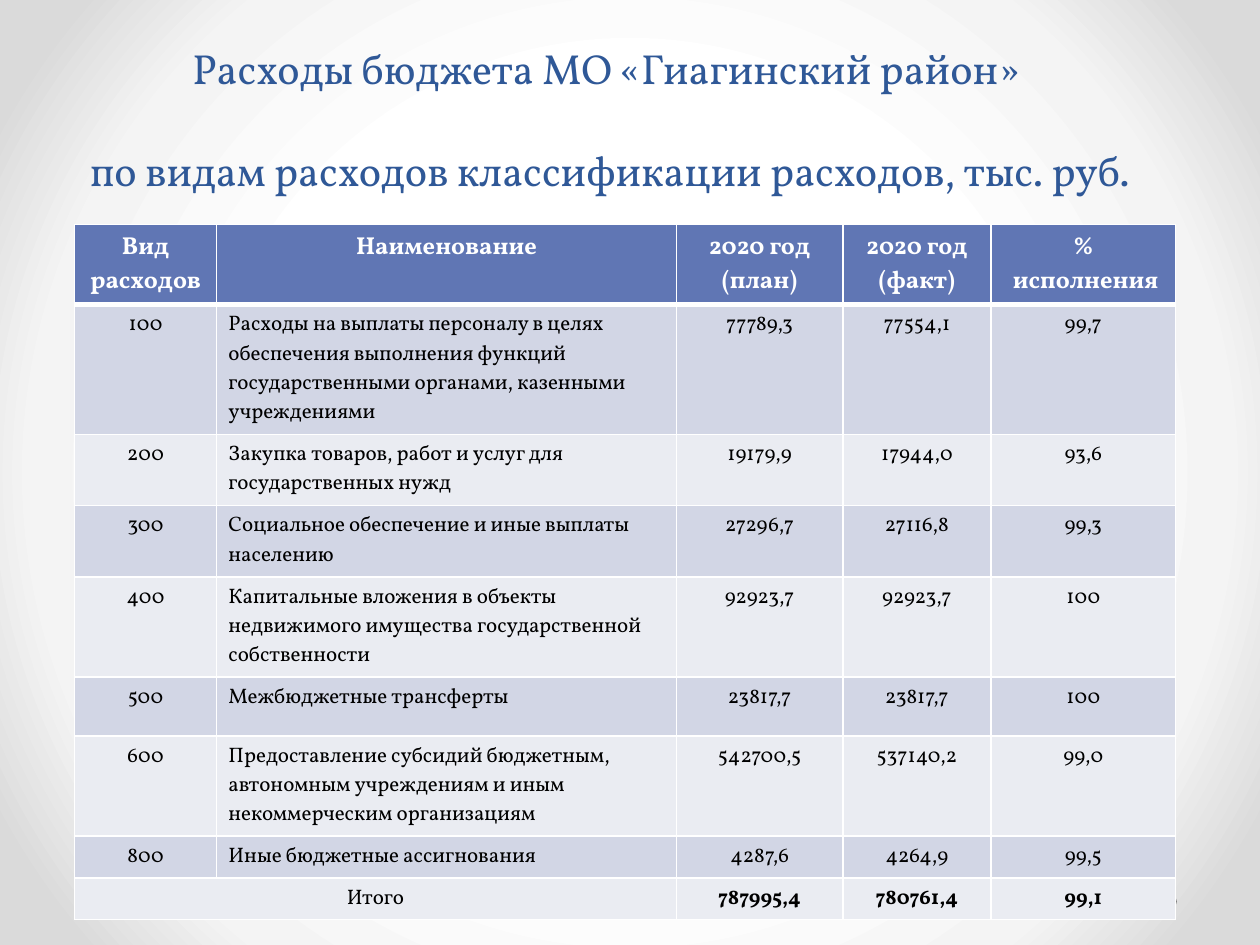
from dataclasses import dataclass

from pptx import Presentation
from pptx import util as u
from pptx.dml.color import RGBColor
from pptx.enum import shapes, text
from pptx.oxml import parse_xml
from pptx.oxml.ns import nsdecls
from pptx.slide import Slide
from pptx.table import _Cell

Pt = u.Pt


@dataclass(frozen=True)
class Theme:
    font: str = "Vollkorn"
    title: str = "2F5897"
    header: str = "6076B4"
    bands: tuple[str, str] = ("D2D6E5", "EAECF2")
    white: str = "FFFFFF"
    black: str = "000000"
    dot: str = "808080"
    background: tuple[tuple[int, str], ...] = (
        (50, "FFFFFF"), (76, "F4F4F4"), (92, "DADADA"))
    title_size: int = 24
    header_size: int = 14
    body_size: int = 12


@dataclass(frozen=True)
class CellStyle:
    fill: str
    color: str
    size: int
    bold: bool = False
    centered: bool = True
    bottom_line: int = 1


@dataclass(frozen=True)
class Expense:
    code: str
    name: str
    plan: str
    fact: str
    percent: str
    height: float


THEME = Theme()
TITLE = ("Расходы бюджета МО «Гиагинский район» \v"
         "по видам расходов классификации расходов, тыс. руб.")
HEADERS = ("Вид расходов", "Наименование", "2020 год\n(план)",
           "2020 год (факт)", "%\n исполнения")
HEADER_HEIGHT = 45.8
COLUMN_WIDTHS = (81.2, 262.8, 95, 84.8, 105.4)
EXPENSES = (
    Expense("100", "Расходы на выплаты персоналу в целях обеспечения выполнения функций "
            "государственными органами, казенными учреждениями",
            "77789,3", "77554,1", "99,7", 74.2),
    Expense("200", "Закупка товаров, работ и услуг для государственных нужд",
            "19179,9", "17944,0", "93,6", 40.7),
    Expense("300", "Социальное обеспечение и иные выплаты населению",
            "27296,7", "27116,8", "99,3", 40.7),
    Expense("400", "Капитальные вложения в объекты недвижимого имущества "
            "государственной собственности", "92923,7", "92923,7", "100", 57.2),
    Expense("500", "Межбюджетные трансферты", "23817,7", "23817,7", "100", 33.8),
    Expense("600", "Предоставление субсидий бюджетным, автономным учреждениям и иным "
            "некоммерческим организациям", "542700,5", "537140,2", "99,0", 57.2),
    Expense("800", "Иные бюджетные ассигнования", "4287,6", "4264,9", "99,5", 23.9),
    Expense("Итого", "", "787995,4", "780761,4", "99,1", 23.9),
)


def set_background(slide: Slide) -> None:
    slide.background.fill.solid()
    properties = slide.element.xpath(".//p:bgPr")[0]
    stops = "".join(
        f'<a:gs pos="{position * 1000}"><a:srgbClr val="{color}"/></a:gs>'
        for position, color in THEME.background)
    properties.replace(properties[0], parse_xml(
        f'<a:gradFill {nsdecls("a")} rotWithShape="1"><a:gsLst>{stops}</a:gsLst>'
        '<a:path path="circle"><a:fillToRect l="50000" t="50000" r="50000" b="50000"/>'
        '</a:path></a:gradFill>'))


def add_dot(slide: Slide, left: float) -> None:
    shape = slide.shapes.add_shape(
        shapes.MSO_SHAPE.OVAL, Pt(left), Pt(511.9), Pt(6.5), Pt(6.5))
    shape.shadow.inherit = False
    shape.fill.solid()
    shape.fill.fore_color.rgb = RGBColor.from_string(THEME.dot)
    shape.line.fill.background()


def style_paragraph(paragraph, size: int, color: str, bold: bool, centered: bool) -> None:
    paragraph.alignment = text.PP_ALIGN.CENTER if centered else text.PP_ALIGN.LEFT
    paragraph.font.name = THEME.font
    paragraph.font.size = Pt(size)
    paragraph.font.bold = bold
    paragraph.font.color.rgb = RGBColor.from_string(color)


def add_title(slide: Slide) -> None:
    frame = slide.shapes.add_textbox(Pt(1.5), Pt(48.5), Pt(694), Pt(66.2)).text_frame
    frame.word_wrap = True
    frame.vertical_anchor = text.MSO_ANCHOR.BOTTOM
    paragraph = frame.paragraphs[0]
    paragraph.text = TITLE
    paragraph.line_spacing = Pt(58)
    style_paragraph(paragraph, THEME.title_size, THEME.title, False, True)


def fill_cell(cell: _Cell, content: str, style: CellStyle) -> None:
    cell.text = content
    cell.margin_left = cell.margin_right = Pt(6.8)
    cell.margin_top = cell.margin_bottom = Pt(3.6)
    for paragraph in cell.text_frame.paragraphs:
        style_paragraph(paragraph, style.size, style.color, style.bold, style.centered)
    cell.fill.solid()
    cell.fill.fore_color.rgb = RGBColor.from_string(style.fill)
    properties = cell._tc.get_or_add_tcPr()
    for index, side in enumerate("LRTB"):
        width = Pt(style.bottom_line if side == "B" else 1)
        properties.insert(index, parse_xml(
            f'<a:ln{side} {nsdecls("a")} w="{width}"><a:solidFill>'
            f'<a:srgbClr val="{THEME.white}"/></a:solidFill></a:ln{side}>'))


def add_expense_table(slide: Slide) -> None:
    heights = (HEADER_HEIGHT, *(expense.height for expense in EXPENSES))
    table = slide.shapes.add_table(
        len(heights), len(COLUMN_WIDTHS), Pt(42.6), Pt(128.3),
        Pt(sum(COLUMN_WIDTHS)), Pt(sum(heights))).table
    for column, width in zip(table.columns, COLUMN_WIDTHS):
        column.width = Pt(width)
    for row, height in zip(table.rows, heights):
        row.height = Pt(height)

    header = CellStyle(THEME.header, THEME.white, THEME.header_size, True, True, 3)
    for column, label in enumerate(HEADERS):
        fill_cell(table.cell(0, column), label, header)

    total_row = len(EXPENSES)
    for row, expense in enumerate(EXPENSES, 1):
        values = (expense.code, expense.name, expense.plan, expense.fact, expense.percent)
        for column, value in enumerate(values):
            style = CellStyle(THEME.bands[(row - 1) % 2], THEME.black, THEME.body_size,
                              bold=row == total_row and column > 1,
                              centered=column != 1)
            fill_cell(table.cell(row, column), value, style)
    table.cell(total_row, 0).merge(table.cell(total_row, 1))


def main() -> None:
    presentation = Presentation()
    presentation.slide_width, presentation.slide_height = Pt(720), Pt(540)
    slide = presentation.slides.add_slide(presentation.slide_layouts[6])
    set_background(slide)
    for left in (666, 44.6):
        add_dot(slide, left)
    add_title(slide)
    add_expense_table(slide)
    presentation.save("out.pptx")


if __name__ == "__main__":
    main()
